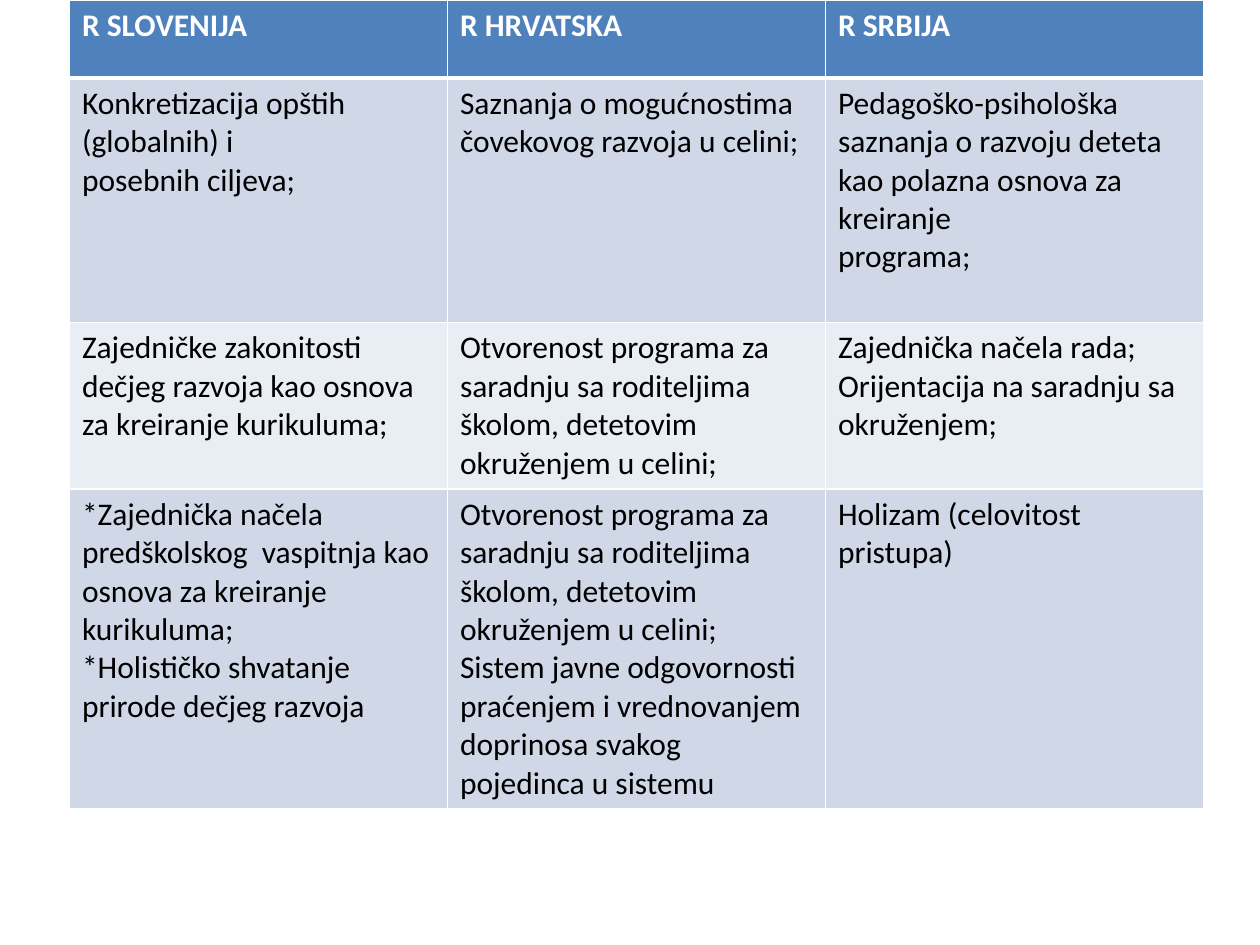
from lxml import etree
from pptx import Presentation
from pptx import util as u
from pptx.dml.color import RGBColor
from pptx.oxml.ns import qn

HUES = {"head": "4F81BD", "odd": "D0D8E8", "even": "E9EDF4",
        "line": "FFFFFF", "title": "FFFFFF", "body": "000000"}
FONT, SIZE = "Calibri", 18

OPEN = ["Otvorenost programa za saradnju sa roditeljima školom, detetovim",
        "okruženjem u celini;"]

# Each row: height in cm, then one list of paragraphs per country
ROWS = [
    (1.57, [["R SLOVENIJA"], ["R HRVATSKA"], ["R SRBIJA"]]),
    (4.93, [
        ["Konkretizacija opštih (globalnih) i", "posebnih ciljeva;"],
        ["Saznanja o mogućnostima", "čovekovog razvoja u celini;"],
        ["Pedagoško-psihološka",
         "saznanja o razvoju deteta kao polazna osnova za kreiranje",
         "programa;"],
    ]),
    (3.35, [
        ["Zajedničke zakonitosti dečjeg razvoja kao osnova za kreiranje kurikuluma;"],
        OPEN,
        ["Zajednička načela rada;", "Orijentacija na saradnju sa", "okruženjem;"],
    ]),
    (6.45, [
        ["*Zajednička načela predškolskog  vaspitnja kao osnova za kreiranje kurikuluma;",
         "*Holističko shvatanje prirode dečjeg razvoja"],
        OPEN + ["Sistem javne odgovornosti", "praćenjem i vrednovanjem",
                "doprinosa svakog pojedinca u sistemu"],
        ["Holizam (celovitost pristupa)"],
    ]),
]
LEFT, TOP, COL = 1.4, 0, 7.62


def edge(cell, side, width):
    props = cell._tc.get_or_add_tcPr()
    line = etree.SubElement(props, qn("a:ln" + side), w=str(u.Pt(width)))
    fill = etree.SubElement(line, qn("a:solidFill"))
    etree.SubElement(fill, qn("a:srgbClr"), val=HUES["line"])


def write(cell, paras, hue, bold):
    frame = cell.text_frame
    for i, words in enumerate(paras):
        para = frame.add_paragraph() if i else frame.paragraphs[0]
        run = para.add_run()
        run.text = words
        font = run.font
        font.name, font.size, font.bold = FONT, u.Pt(SIZE), bold
        font.color.rgb = RGBColor.from_string(hue)


def style(cell, row):
    """Draw the grid lines, heavier below the header, then fill the cell."""
    for side in "LRTB":
        heavy = (row, side) in ((0, "B"), (1, "T"))
        edge(cell, side, 3 if heavy else 1)
    band = "head" if row == 0 else "odd" if row % 2 else "even"
    cell.fill.solid()
    cell.fill.fore_color.rgb = RGBColor.from_string(HUES[band])


def main():
    deck = Presentation()
    deck.slide_width, deck.slide_height = u.Cm(25.4), u.Cm(19.05)
    slide = deck.slides.add_slide(deck.slide_layouts[6])
    count = len(ROWS[0][1])
    high = sum(size for size, _ in ROWS)
    grid = slide.shapes.add_table(len(ROWS), count, u.Cm(LEFT), u.Cm(TOP),
                                  u.Cm(COL * count), u.Cm(high)).table
    for col in grid.columns:
        col.width = u.Cm(COL)
    for r, (size, cells) in enumerate(ROWS):
        grid.rows[r].height = u.Cm(size)
        for c, paras in enumerate(cells):
            cell = grid.cell(r, c)
            style(cell, r)
            write(cell, paras, HUES["body" if r else "title"], r == 0)
    deck.save("out.pptx")


if __name__ == "__main__":
    main()
